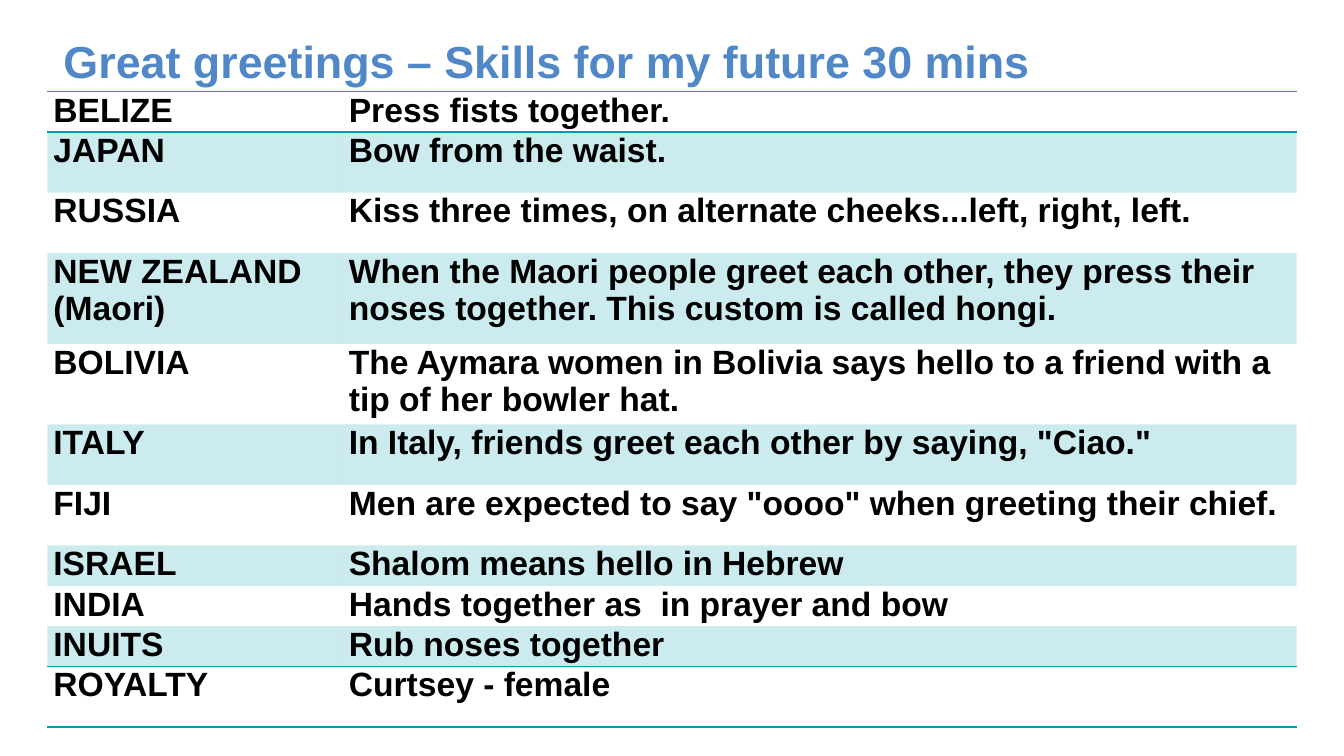
from lxml import etree
from pptx import Presentation
from pptx import util as u
from pptx.dml.color import RGBColor
from pptx.enum import text
from pptx.oxml import ns

BLUE = RGBColor(0x50, 0x87, 0xC7)
TEAL = RGBColor(0x00, 0x9D, 0xAD)
BLACK = RGBColor(0x00, 0x00, 0x00)

ONE_LINE, TWO_LINES, SPACED, TALL = 0.37, 0.74, 0.6, 0.9

GREETINGS = [
    ("BELIZE", "Press fists together.", ONE_LINE),
    ("JAPAN", "Bow from the waist.", SPACED),
    ("RUSSIA", "Kiss three times, on alternate cheeks...left, right, left.", SPACED),
    ("NEW ZEALAND (Maori)", "When the Maori people greet each other, they press their "
     "noses together. This custom is called hongi.", TALL),
    ("BOLIVIA", "The Aymara women in Bolivia says hello to a friend with a "
     "tip of her bowler hat.", TWO_LINES),
    ("ITALY", 'In Italy, friends greet each other by saying, "Ciao."', SPACED),
    ("FIJI", 'Men are expected to say "oooo" when greeting their chief.', SPACED),
    ("ISRAEL", "Shalom means hello in Hebrew", ONE_LINE),
    ("INDIA", "Hands together as  in prayer and bow", ONE_LINE),
    ("INUITS", "Rub noses together", ONE_LINE),
    ("ROYALTY", "Curtsey - female", SPACED),
]


def write(tf, words, size=24, color=BLACK, bold=True, font="Arial"):
    tf.word_wrap = True
    p = tf.paragraphs[0]
    r = p.add_run()
    r.text = words
    r.font.name = font
    r.font.size = u.Pt(size)
    r.font.bold = bold
    r.font.color.rgb = color


def sub(parent, tag, **attrs):
    return etree.SubElement(parent, ns.qn(tag), **attrs)


class Deck:
    def __init__(self, width, height):
        self.prs = Presentation()
        self.prs.slide_width = u.Inches(width)
        self.prs.slide_height = u.Inches(height)
        self.s = self.prs.slides.add_slide(self.prs.slide_layouts[6])

    def title(self, words, left, top, width, height):
        sp = self.s.shapes.add_textbox(*map(u.Inches, (left, top, width, height)))
        tf = sp.text_frame
        tf.margin_left = tf.margin_right = tf.margin_top = tf.margin_bottom = 0
        tf.vertical_anchor = text.MSO_ANCHOR.MIDDLE
        write(tf, words, size=32, color=BLUE)

    def table(self, rows, left, top, col_widths, ruled_edges):
        height = sum(row[-1] for row in rows)
        box = map(u.Inches, (left, top, sum(col_widths), height))
        table = self.s.shapes.add_table(len(rows), len(col_widths), *box).table
        table.first_row = table.horz_banding = False
        for column, width in zip(table.columns, col_widths):
            column.width = u.Inches(width)
        for i, (*words, row_height) in enumerate(rows):
            table.rows[i].height = u.Inches(row_height)
            for j, content in enumerate(words):
                self.cell(table.cell(i, j), content, shaded=i % 2 == 1,
                          ruled={"lnT": i in ruled_edges, "lnB": i + 1 in ruled_edges})

    def cell(self, cell, words, shaded, ruled):
        cell.margin_left = cell.margin_right = u.Inches(0.06)
        cell.margin_top = cell.margin_bottom = 0
        write(cell.text_frame, words)
        tc_pr = cell._tc.get_or_add_tcPr()
        for side in ("lnL", "lnR", "lnT", "lnB"):
            line = sub(tc_pr, f"a:{side}", w=str(u.Pt(1)))
            if ruled.get(side):
                sub(sub(line, "a:solidFill"), "a:srgbClr", val=str(TEAL))
            else:
                sub(line, "a:noFill")
        if shaded:
            cell.fill.solid()
            cell.fill.fore_color.rgb = TEAL
            tint = tc_pr.find(ns.qn("a:solidFill")).find(ns.qn("a:srgbClr"))
            sub(tint, "a:alpha", val="20000")
        else:
            cell.fill.background()


def main():
    deck = Deck(13.33, 7.5)
    deck.title("Great greetings – Skills for my future 30 mins", 0.63, 0.3, 12.23, 0.61)
    last = len(GREETINGS)
    deck.table(GREETINGS, 0.47, 0.91, (2.93, 9.46), ruled_edges=(0, 1, last - 1, last))
    deck.prs.save("out.pptx")


if __name__ == "__main__":
    main()
